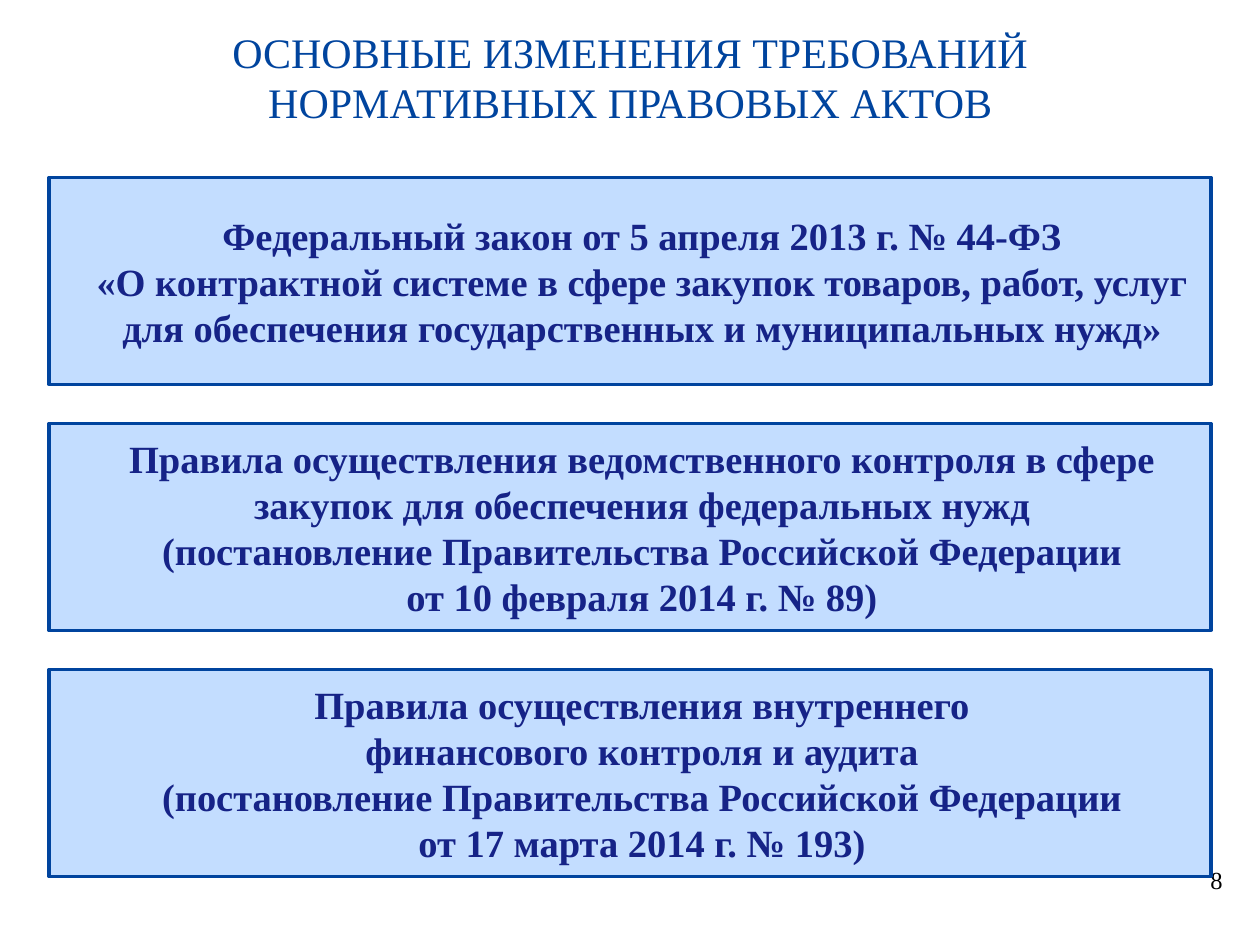
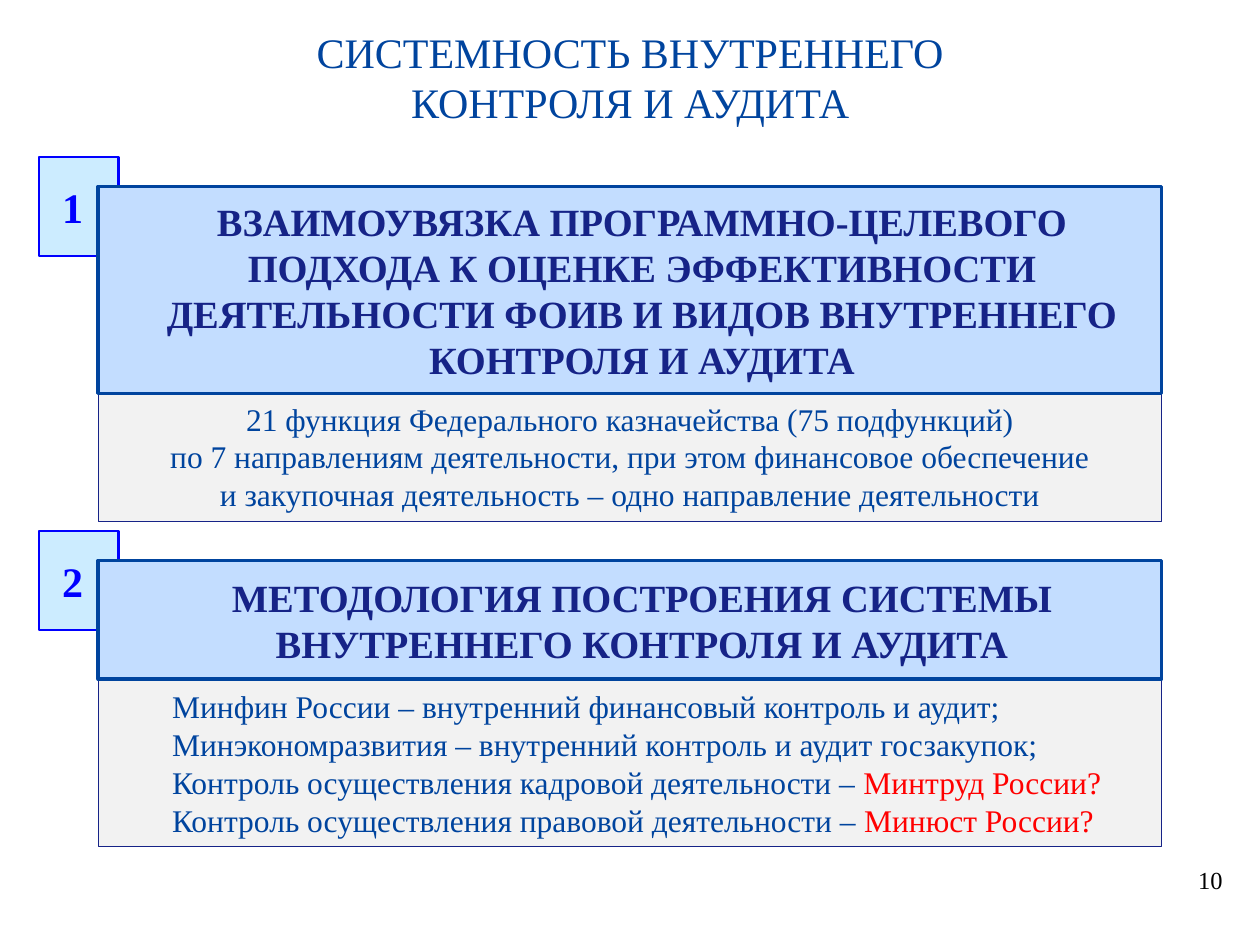
from dataclasses import dataclass

from pptx import Presentation
from pptx.dml.color import RGBColor
from pptx.enum.shapes import MSO_SHAPE as Shape
from pptx.enum.text import MSO_ANCHOR as Anchor, PP_ALIGN as Align
from pptx.util import Cm, Pt

FONT = "Times New Roman"
BLUE = RGBColor(0x00, 0x44, 0x9E)
NAVY = RGBColor(0x16, 0x23, 0x87)
BRIGHT_BLUE = RGBColor(0x00, 0x00, 0xFF)
LIGHT_BLUE = RGBColor(0xC3, 0xDD, 0xFF)
PALE_BLUE = RGBColor(0xCC, 0xEC, 0xFF)
LIGHT_GREY = RGBColor(0xF2, 0xF2, 0xF2)
RED = RGBColor(0xFF, 0x00, 0x00)
BLACK = RGBColor(0x00, 0x00, 0x00)

SLIDE_WIDTH, SLIDE_HEIGHT = 25.4, 19.05


@dataclass(frozen=True)
class TextStyle:
    size: float
    color: RGBColor
    bold: bool = False
    align: Align = Align.CENTER
    indent: float = 0


@dataclass(frozen=True)
class BoxStyle:
    fill: RGBColor
    line: RGBColor
    line_width: float
    text: TextStyle
    anchor: Anchor = Anchor.MIDDLE
    left_inset: float = 0.25


@dataclass(frozen=True)
class Section:
    """Numbered heading with a grey panel right below it."""
    top: float
    heading: str
    heading_height: float
    panel_style: BoxStyle
    panel_lines: tuple
    panel_height: float


TITLE = TextStyle(24, BLUE)
PAGE_NUMBER = TextStyle(14, BLACK, align=Align.RIGHT)
HEADING = BoxStyle(LIGHT_BLUE, BLUE, 2, TextStyle(22, NAVY, True, indent=0.48))
BADGE = BoxStyle(PALE_BLUE, BRIGHT_BLUE, 1.25, TextStyle(24, BRIGHT_BLUE, True), left_inset=0)
CENTRED_PANEL = BoxStyle(LIGHT_GREY, NAVY, 0.75, TextStyle(18, BLUE), Anchor.TOP)
LIST_PANEL = BoxStyle(LIGHT_GREY, NAVY, 0.75,
                      TextStyle(18, BLUE, align=Align.LEFT, indent=1.24))

REGULATIONS = (
    ("Федеральный закон от 5 апреля 2013 г. № 44-ФЗ",
     "«О контрактной системе в сфере закупок товаров, работ, услуг "
     "для обеспечения государственных и муниципальных нужд»"),
    ("Правила осуществления ведомственного контроля в сфере "
     "закупок для обеспечения федеральных нужд",
     "(постановление Правительства Российской Федерации",
     "от 10 февраля 2014 г. № 89)"),
    ("Правила осуществления внутреннего",
     "финансового контроля и аудита",
     "(постановление Правительства Российской Федерации",
     "от 17 марта 2014 г. № 193)"),
)

# A line given as a pair has its second part in red
SECTIONS = (
    Section(3.76,
            "ВЗАИМОУВЯЗКА ПРОГРАММНО-ЦЕЛЕВОГО ПОДХОДА К ОЦЕНКЕ ЭФФЕКТИВНОСТИ "
            "ДЕЯТЕЛЬНОСТИ ФОИВ И ВИДОВ ВНУТРЕННЕГО КОНТРОЛЯ И АУДИТА", 4.17,
            CENTRED_PANEL,
            ("21 функция Федерального казначейства (75 подфункций)",
             "по 7 направлениям деятельности, при этом финансовое обеспечение",
             "и закупочная деятельность – одно направление деятельности"), 2.59),
    Section(11.3,
            "МЕТОДОЛОГИЯ ПОСТРОЕНИЯ СИСТЕМЫ ВНУТРЕННЕГО КОНТРОЛЯ И АУДИТА", 2.39,
            LIST_PANEL,
            ("Минфин России – внутренний финансовый контроль и аудит;",
             "Минэкономразвития – внутренний контроль и аудит госзакупок;",
             ("Контроль осуществления кадровой деятельности –", " Минтруд России?"),
             ("Контроль осуществления правовой деятельности –", " Минюст России?")), 3.38),
)


def write_lines(frame, lines: tuple, style: TextStyle) -> None:
    frame.word_wrap = True
    for index, line in enumerate(lines):
        paragraph = frame.paragraphs[0] if index == 0 else frame.add_paragraph()
        paragraph.alignment = style.align
        if style.indent:
            properties = paragraph._p.get_or_add_pPr()
            properties.set("marL", str(Cm(style.indent)))
            properties.set("indent", "0")
        font = paragraph.font
        font.name, font.size, font.bold = FONT, Pt(style.size), style.bold
        font.color.rgb = style.color
        plain, *highlights = (line,) if isinstance(line, str) else line
        paragraph.add_run().text = plain
        for highlight in highlights:
            run = paragraph.add_run()
            run.text = highlight
            run.font.color.rgb = RED


def add_text(slide, left: float, top: float, width: float, height: float,
             lines: tuple, style: TextStyle) -> None:
    box = slide.shapes.add_textbox(Cm(left), Cm(top), Cm(width), Cm(height))
    write_lines(box.text_frame, lines, style)


def add_box(slide, left: float, top: float, width: float, height: float,
            lines: tuple, style: BoxStyle) -> None:
    shape = slide.shapes.add_shape(Shape.RECTANGLE, Cm(left), Cm(top), Cm(width), Cm(height))
    shape.shadow.inherit = False
    shape.fill.solid()
    shape.fill.fore_color.rgb = style.fill
    shape.line.color.rgb = style.line
    shape.line.width = Pt(style.line_width)
    frame = shape.text_frame
    frame.vertical_anchor = style.anchor
    frame.margin_left = Cm(style.left_inset)
    write_lines(frame, lines, style.text)


def add_slide(presentation, title: tuple, number: int):
    """Blank slide with the shared title and page number."""
    slide = presentation.slides.add_slide(presentation.slide_layouts[6])
    add_text(slide, 0.79, 0.4, 23.83, 1.4, title, TITLE)
    add_text(slide, 23.7, 17.32, 1.2, 1.32, (str(number),), PAGE_NUMBER)
    return slide


def build_regulations(presentation) -> None:
    slide = add_slide(presentation, ("ОСНОВНЫЕ ИЗМЕНЕНИЯ ТРЕБОВАНИЙ",
                                     "НОРМАТИВНЫХ ПРАВОВЫХ АКТОВ"), 8)
    margin, first_top, height, gap = 0.99, 3.58, 4.17, 0.79
    for index, lines in enumerate(REGULATIONS):
        add_box(slide, margin, first_top + index * (height + gap),
                SLIDE_WIDTH - 2 * margin, height, lines, HEADING)


def build_system(presentation) -> None:
    slide = add_slide(presentation, ("СИСТЕМНОСТЬ ВНУТРЕННЕГО", "КОНТРОЛЯ И АУДИТА"), 10)
    margin = 1.98
    width = SLIDE_WIDTH - 2 * margin
    for number, section in enumerate(SECTIONS, 1):
        # The heading overlaps the number badge
        add_box(slide, 0.79, section.top - 0.59, 1.6, 2, (str(number),), BADGE)
        panel_top = section.top + section.heading_height
        add_box(slide, margin, panel_top, width, section.panel_height,
                section.panel_lines, section.panel_style)
        add_box(slide, margin, section.top, width, section.heading_height,
                (section.heading,), HEADING)


def main() -> None:
    presentation = Presentation()
    presentation.slide_width, presentation.slide_height = Cm(SLIDE_WIDTH), Cm(SLIDE_HEIGHT)
    build_regulations(presentation)
    build_system(presentation)
    presentation.save("out.pptx")


if __name__ == "__main__":
    main()
